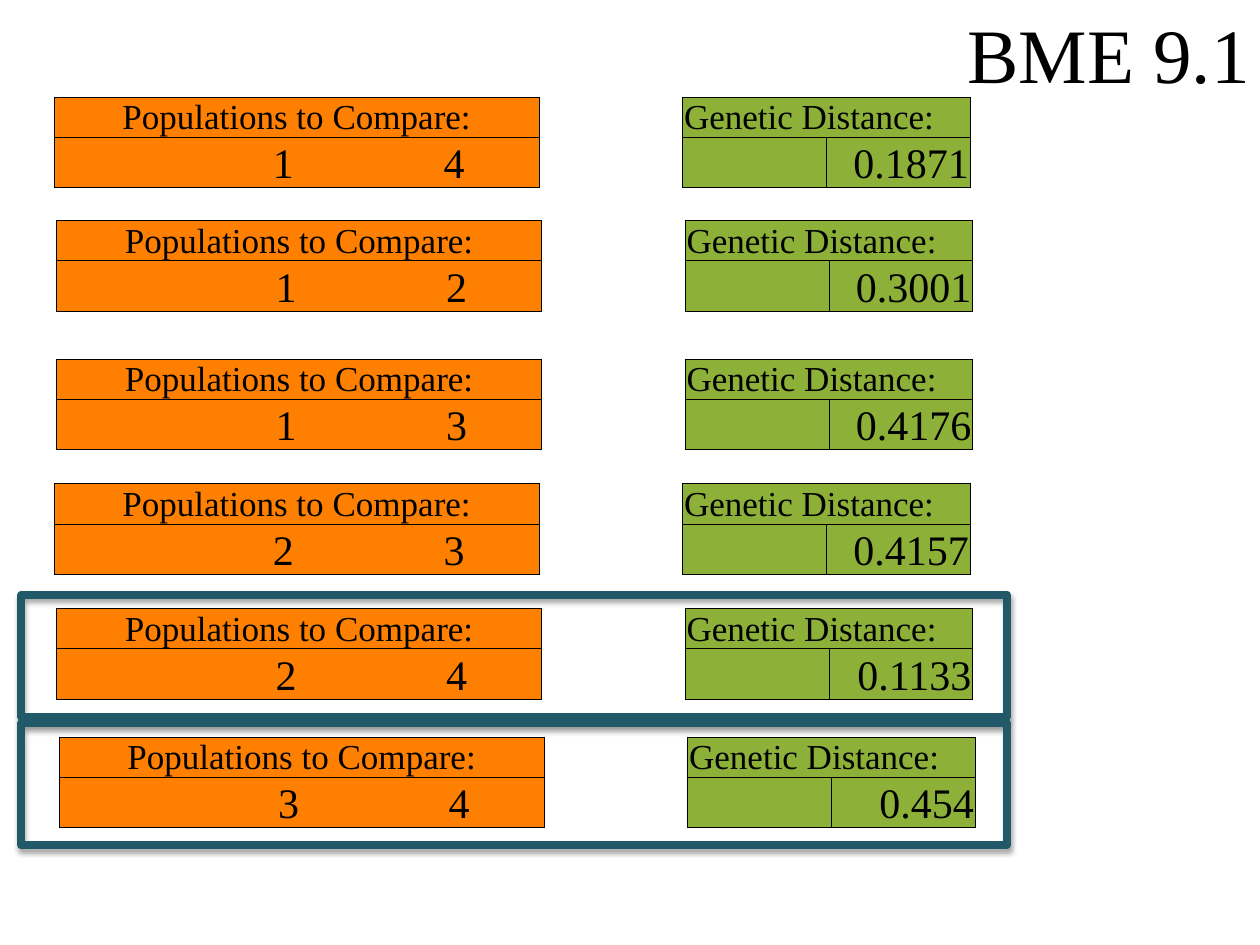
from dataclasses import dataclass

from lxml import etree
from pptx import Presentation
from pptx.dml.color import RGBColor
from pptx.enum.shapes import MSO_SHAPE
from pptx.enum.text import MSO_ANCHOR, PP_ALIGN
from pptx.oxml import parse_xml
from pptx.oxml.ns import nsdecls, qn
from pptx.util import Inches, Pt

RECTANGLE = MSO_SHAPE.RECTANGLE
MIDDLE, BOTTOM = MSO_ANCHOR.MIDDLE, MSO_ANCHOR.BOTTOM
LEFT, CENTER, RIGHT = PP_ALIGN.LEFT, PP_ALIGN.CENTER, PP_ALIGN.RIGHT
NO_STYLE_NO_GRID = "{2D5ABB26-0587-4C30-8999-92F81FD0307C}"

COLUMN_WIDTHS = (1.14, 1.36, 1.35, 1.14, 1.14, 1.14)
ROW_HEIGHTS = (0.26, 0.32, 0.4)
POPULATION_COLUMNS = (0, 2)
DISTANCE_COLUMNS = (4, 5)

# left, top, first population, second population, genetic distance
COMPARISONS = (
    (0.43, 0.51, "1", "4", "0.1871"),
    (0.45, 1.49, "1", "2", "0.3001"),
    (0.45, 2.59, "1", "3", "0.4176"),
    (0.43, 3.58, "2", "3", "0.4157"),
    (0.45, 4.57, "2", "4", "0.1133"),
    (0.47, 5.59, "3", "4", "0.454"),
)
HIGHLIGHT_TOPS = (4.72, 5.74)


@dataclass(frozen=True)
class Theme:
    font: str = "Times New Roman"
    ink: str = "000000"
    population: str = "FF8000"
    distance: str = "8DB138"
    highlight: str = "215968"
    title_size: int = 44
    label_size: int = 20
    value_size: int = 24
    spacer_size: int = 10
    border_width: float = 0.5
    highlight_width: float = 4.5


class PageBuilder:
    def __init__(self, page, theme):
        self.page = page
        self.theme = theme

    def set_text(self, text_frame, text, size, alignment):
        text_frame.text = text
        para = text_frame.paragraphs[0]
        para.alignment = alignment
        font = para.runs[0].font
        font.name = self.theme.font
        font.size = Pt(size)
        font.color.rgb = RGBColor.from_string(self.theme.ink)

    def title(self, text, left, top, width, height):
        box = self.page.shapes.title
        box.left, box.top = Inches(left), Inches(top)
        box.width, box.height = Inches(width), Inches(height)
        box.text_frame.vertical_anchor = MIDDLE
        self.set_text(box.text_frame, text, self.theme.title_size, CENTER)

    def comparison(self, left, top, first, second, distance):
        """Add one table: a population block and a distance block under a spacer row."""
        frame = self.page.shapes.add_table(
            len(ROW_HEIGHTS), len(COLUMN_WIDTHS), Inches(left), Inches(top),
            Inches(sum(COLUMN_WIDTHS)), Inches(sum(ROW_HEIGHTS)))
        table = frame.table
        table.first_row = table.horz_banding = False
        table._tbl.tblPr.find(qn("a:tableStyleId")).text = NO_STYLE_NO_GRID
        for column, width in zip(table.columns, COLUMN_WIDTHS):
            column.width = Inches(width)
        for row, height in zip(table.rows, ROW_HEIGHTS):
            row.height = Inches(height)
        for cell in table.iter_cells():
            self.prepare_cell(cell)

        self.block(table, POPULATION_COLUMNS, self.theme.population,
                   "Populations to Compare:", CENTER)
        self.block(table, DISTANCE_COLUMNS, self.theme.distance,
                   "Genetic Distance:", LEFT)
        values = ((1, first, CENTER), (2, second, CENTER), (5, distance, RIGHT))
        for column, value, alignment in values:
            self.set_text(table.cell(2, column).text_frame, value,
                          self.theme.value_size, alignment)

    def prepare_cell(self, cell):
        """Tighten the margins and keep the empty line from stretching its row."""
        cell.margin_left = cell.margin_right = cell.margin_top = Inches(0.01)
        cell.margin_bottom = 0
        cell.vertical_anchor = BOTTOM
        cell.fill.background()
        line_end = etree.SubElement(cell.text_frame.paragraphs[0]._p, qn("a:endParaRPr"))
        line_end.set("sz", str(self.theme.spacer_size * 100))

    def block(self, table, columns, color, label, alignment):
        """Fill and outline a two-row block whose top row is one merged label."""
        start, end = columns
        for column in range(start, end + 1):
            for row, edge in ((1, "T"), (2, "B")):
                cell = table.cell(row, column)
                cell.fill.solid()
                cell.fill.fore_color.rgb = RGBColor.from_string(color)
                edges = [edge]
                if column == start or row == 1:
                    edges.append("L")
                if column == end or row == 1:
                    edges.append("R")
                self.borders(cell, edges)
        head = table.cell(1, start)
        head.merge(table.cell(1, end))
        self.set_text(head.text_frame, label, self.theme.label_size, alignment)

    def borders(self, cell, edges):
        properties = cell._tc.get_or_add_tcPr()
        ordered = [edge for edge in "LRTB" if edge in edges]
        for position, edge in enumerate(ordered):
            properties.insert(position, parse_xml(
                f'<a:ln{edge} {nsdecls("a")} w="{Pt(self.theme.border_width)}">'
                f'<a:solidFill><a:srgbClr val="{self.theme.ink}"/></a:solidFill>'
                f'</a:ln{edge}>'))

    def highlight(self, left, top, width, height):
        shape = self.page.shapes.add_shape(
            RECTANGLE, Inches(left), Inches(top), Inches(width), Inches(height))
        shape.fill.background()
        shape.line.color.rgb = RGBColor.from_string(self.theme.highlight)
        shape.line.width = Pt(self.theme.highlight_width)
        shape.shadow.inherit = False
        effects = shape._element.spPr.find(qn("a:effectLst"))
        effects.append(parse_xml(
            f'<a:outerShdw {nsdecls("a")} blurRad="{Pt(3.1)}" dist="{Pt(1.8)}" '
            'dir="5400000" rotWithShape="0">'
            f'<a:srgbClr val="{self.theme.ink}"><a:alpha val="35000"/></a:srgbClr>'
            '</a:outerShdw>'))


def main():
    deck = Presentation()
    deck.slide_width, deck.slide_height = Inches(10), Inches(7.5)
    title_only = deck.slide_layouts[5]
    builder = PageBuilder(deck.slides.add_slide(title_only), Theme())
    builder.title("BME 9.1", 7.52, -0.02, 2.56, 0.87)
    for comparison in COMPARISONS:
        builder.comparison(*comparison)
    for top in HIGHLIGHT_TOPS:
        builder.highlight(0.17, top, 7.82, 0.97)
    deck.save("out.pptx")


if __name__ == "__main__":
    main()
